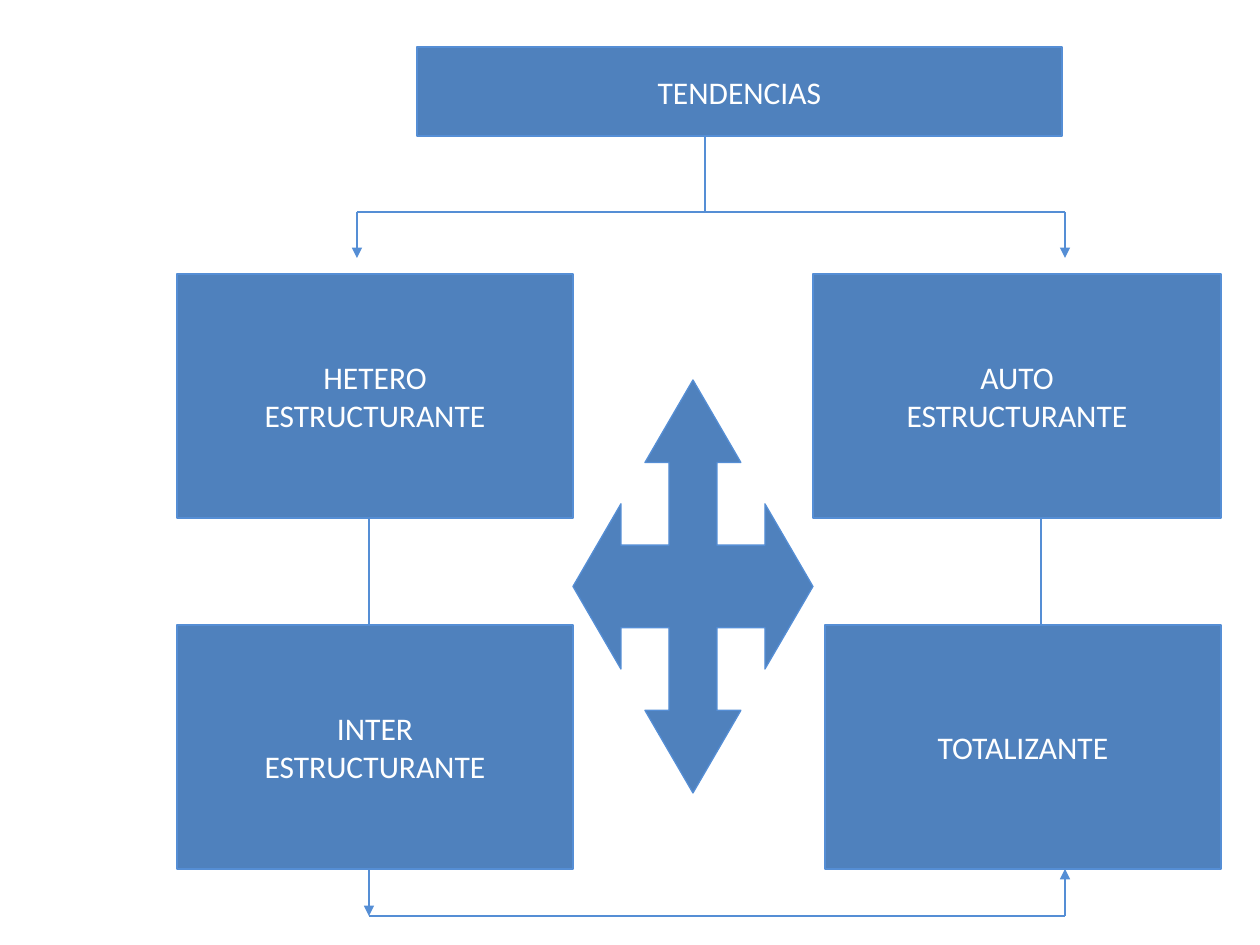
from pptx import Presentation
from pptx.dml.color import RGBColor
from pptx.enum.shapes import MSO_CONNECTOR as Connector, MSO_SHAPE as Shape
from pptx.enum.text import MSO_ANCHOR as Anchor, PP_ALIGN as Align
from pptx.oxml.ns import qn
from pptx.oxml.xmlchemy import OxmlElement
from pptx.util import Pt

PX = 914400 / 126
FILL, LINE, WHITE = "4F81BD", "558ED5", "FFFFFF"

# Boxes: lines of text, left, top, width, height
BOXES = [
    (["TENDENCIAS"], 417, 47, 645, 89),
    (["HETERO", "ESTRUCTURANTE"], 177, 274, 396, 244),
    (["AUTO", "ESTRUCTURANTE"], 813, 274, 408, 244),
    (["TOTALIZANTE"], 825, 625, 396, 244),
    (["INTER", "ESTRUCTURANTE"], 177, 625, 396, 244),
]

# Lines: from x, y, to x, y, arrowhead at the end
LINES = [
    (357, 212, 1065, 212, False),
    (705, 136, 705, 212, False),
    (357, 212, 357, 258, True),
    (1065, 212, 1065, 258, True),
    (369, 916, 1065, 916, False),
    (369, 869, 369, 916, True),
    (1065, 916, 1065, 869, True),
    (369, 518, 369, 625, False),
    (1041, 518, 1041, 625, False),
]

# Four-way arrow: place, and one arm on a 10 by 10 grid
ARROW = (573, 380, 240, 413)
GRID = 10
ARM = [(5, 0), (3, 2), (4, 2), (4, 4), (2, 4), (2, 3)]


def emu(pixels):
    return round(pixels * PX)


def color(value):
    return RGBColor.from_string(value)


def style_line(item):
    item.line.color.rgb = color(LINE)
    item.line.width = Pt(0.75)


def style_shape(shape):
    shape.shadow.inherit = False
    shape.fill.solid()
    shape.fill.fore_color.rgb = color(FILL)
    style_line(shape)


def add_box(page, lines, *place):
    box = page.shapes.add_shape(Shape.RECTANGLE, *map(emu, place))
    style_shape(box)
    frame = box.text_frame
    frame.text = "\n".join(lines)
    frame.word_wrap = False
    frame.vertical_anchor = Anchor.MIDDLE
    for para in frame.paragraphs:
        para.alignment = Align.CENTER
        for span in para.runs:
            span.font.name = "Calibri"
            span.font.size = Pt(18)
            span.font.color.rgb = color(WHITE)


def add_four_way_arrow(page, left, top, width, height):
    points, arm = [], ARM
    for _ in range(4):
        points += arm
        arm = [(y, GRID - x) for x, y in arm]  # quarter turn
    scale = (width * PX / GRID, height * PX / GRID)
    builder = page.shapes.build_freeform(*points[0], scale=scale)
    builder.add_line_segments(points[1:], close=True)
    style_shape(builder.convert_to_shape(emu(left), emu(top)))


def add_line(page, x1, y1, x2, y2, has_head):
    line = page.shapes.add_connector(Connector.STRAIGHT, *map(emu, (x1, y1, x2, y2)))
    style_line(line)
    properties = line._element.spPr
    if has_head:
        head = OxmlElement("a:tailEnd")
        head.set("type", "triangle")
        properties.find(qn("a:ln")).append(head)
    properties.append(OxmlElement("a:effectLst"))


def main():
    deck = Presentation()
    deck.slide_width, deck.slide_height = emu(1260), emu(945)
    page = deck.slides.add_slide(deck.slide_layouts[6])
    for box in BOXES:
        add_box(page, *box)
    add_four_way_arrow(page, *ARROW)
    for line in LINES:
        add_line(page, *line)
    deck.save("out.pptx")


if __name__ == "__main__":
    main()
